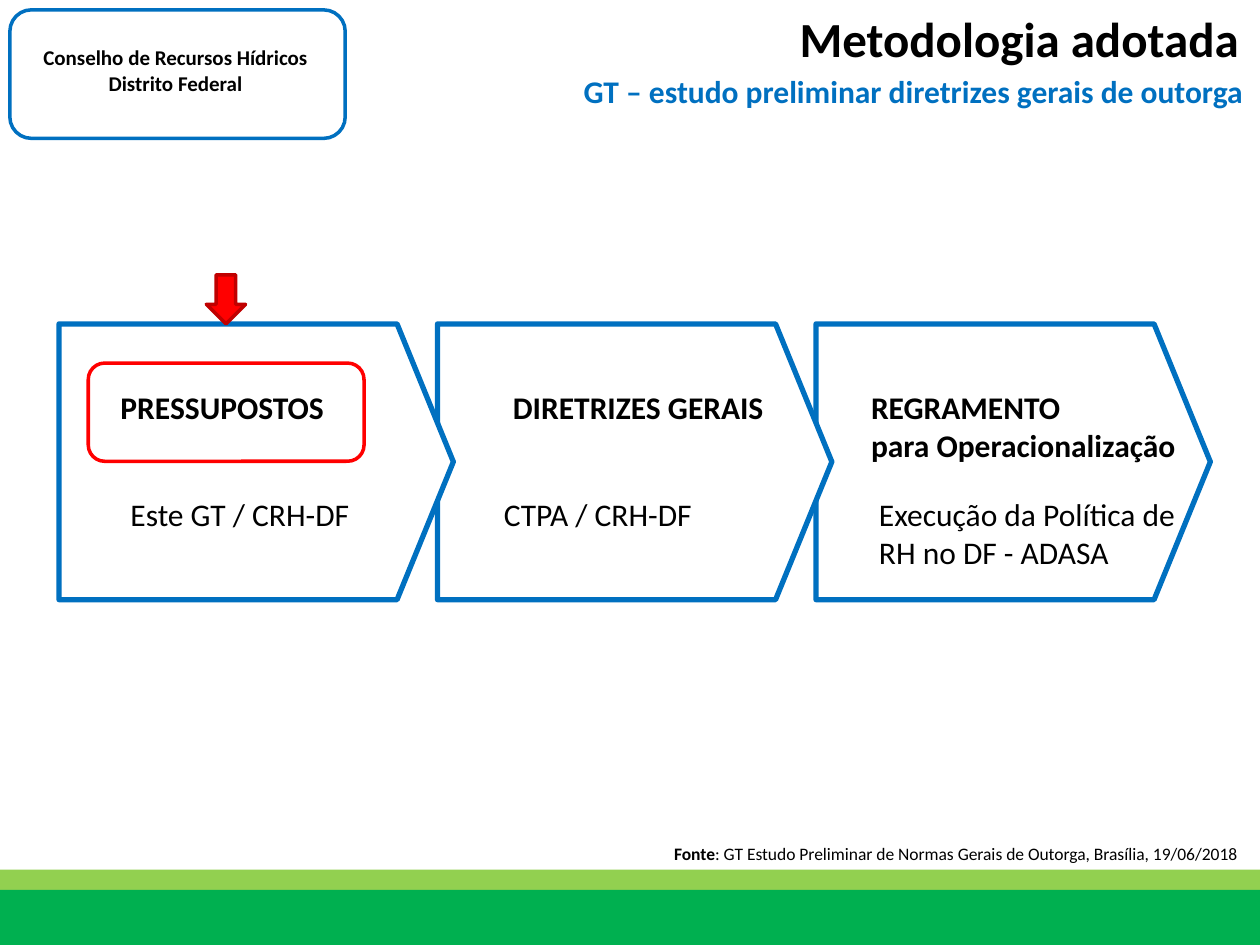
import pptx
import pptx.dml.color
import pptx.enum.shapes
import pptx.enum.text
import pptx.util

Cm = pptx.util.Cm
SHAPE = pptx.enum.shapes.MSO_SHAPE
ALIGN = pptx.enum.text.PP_ALIGN

BLACK = pptx.dml.color.RGBColor(0x00, 0x00, 0x00)
WHITE = pptx.dml.color.RGBColor(0xFF, 0xFF, 0xFF)
BLUE = pptx.dml.color.RGBColor(0x00, 0x70, 0xC0)
RED = pptx.dml.color.RGBColor(0xFF, 0x00, 0x00)
DARK_RED = pptx.dml.color.RGBColor(0xC0, 0x00, 0x00)
LIGHT_GREEN = pptx.dml.color.RGBColor(0x92, 0xD0, 0x50)
GREEN = pptx.dml.color.RGBColor(0x00, 0xB0, 0x50)

STAGE_WIDTH, STAGE_HEIGHT, STAGE_PITCH = 7.95, 5.56, 7.63
# heading lines, (indent, width), body, (indent, width), body wraps
STAGES = [
    (["PRESSUPOSTOS"], (0.99, 4.65), "Este GT / CRH-DF", (1.19, 4.98), False),
    (["DIRETRIZES GERAIS"], (1.27, 5.77), "CTPA / CRH-DF", (1.09, 4.34), False),
    (["REGRAMENTO", "para Operacionalização"], (0.86, 6.71),
     "Execução da Política de RH no DF - ADASA", (1.02, 6.76), True),
]


def write_text(shape, lines, size=18, color=BLACK, bold=False,
               align=ALIGN.LEFT, wrap=False):
    """Fill a shape; each line is a string or a list of (text, bold) runs."""
    frame = shape.text_frame
    frame.word_wrap = wrap
    frame.auto_size = pptx.enum.text.MSO_AUTO_SIZE.SHAPE_TO_FIT_TEXT
    frame.vertical_anchor = pptx.enum.text.MSO_ANCHOR.TOP
    for index, line in enumerate(lines):
        paragraph = frame.add_paragraph() if index else frame.paragraphs[0]
        paragraph.alignment = align
        runs = [(line, bold)] if isinstance(line, str) else line
        for text, run_bold in runs:
            run = paragraph.add_run()
            run.text = text
            run.font.name = "Calibri"
            run.font.size = pptx.util.Pt(size)
            run.font.bold = run_bold
            run.font.color.rgb = color


def add_text(slide, left, top, width, height, lines, **text_format):
    box = slide.shapes.add_textbox(Cm(left), Cm(top), Cm(width), Cm(height))
    write_text(box, lines, **text_format)


def add_figure(slide, kind, left, top, width, height, fill=None, line=None, weight=2):
    shape = slide.shapes.add_shape(kind, Cm(left), Cm(top), Cm(width), Cm(height))
    shape.shadow.inherit = False
    if fill is None:
        shape.fill.background()
    else:
        shape.fill.solid()
        shape.fill.fore_color.rgb = fill
    if line is None:
        shape.line.fill.background()
    else:
        shape.line.color.rgb = line
        shape.line.width = pptx.util.Pt(weight)
    return shape


def add_footer(slide, left, top, width, height):
    add_figure(slide, SHAPE.RECTANGLE, left, top, width, 0.61, LIGHT_GREEN)
    add_figure(slide, SHAPE.RECTANGLE, left, top + 0.41, width, height - 0.41, GREEN)
    source = [("Fonte", True),
              (": GT Estudo Preliminar de Normas Gerais de Outorga, Brasília, 19/06/2018", False)]
    add_text(slide, left + 13.34, top - 0.66, 12.06, 0.69, [source], size=10)


def add_heading(slide, left, top, width):
    """Place the title and the subtitle against the right of the box."""
    title = slide.shapes.title
    title.left, title.top = Cm(left + width - 9.57), Cm(top)
    title.width, title.height = Cm(9.47), Cm(1.45)
    write_text(title, ["Metodologia adotada"], size=28, bold=True, align=ALIGN.RIGHT)
    add_text(slide, left, top + 1.27, width, 1.02,
             ["GT – estudo preliminar diretrizes gerais de outorga"],
             color=BLUE, bold=True, align=ALIGN.RIGHT)


def add_stage(slide, left, top, stage):
    heading, (heading_indent, heading_width), body, (body_indent, body_width), wrap = stage
    arrow = add_figure(slide, SHAPE.PENTAGON, left, top, STAGE_WIDTH, STAGE_HEIGHT,
                       WHITE, BLUE, 3)
    arrow.adjustments[0] = 0.204
    add_text(slide, left + heading_indent, top + 1.17, heading_width,
             0.2 + 0.8 * len(heading), heading, bold=True)
    add_text(slide, left + body_indent, top + 3.33, body_width,
             1.8 if wrap else 1.02, [body], wrap=wrap)


def add_stages(slide, left, top):
    """Place the stages from right to left, so that each tip covers the next one."""
    for index, stage in reversed(list(enumerate(STAGES))):
        add_stage(slide, left + index * STAGE_PITCH, top, stage)


def add_highlight(slide, left, top):
    """Mark the current stage, whose corner is given."""
    add_figure(slide, SHAPE.DOWN_ARROW, left + 2.97, top - 0.99, 0.79, 0.99, RED, DARK_RED)
    add_figure(slide, SHAPE.ROUNDED_RECTANGLE, left + 0.59, top + 0.79, 5.56, 1.98, line=RED)


def add_council(slide, left, top, width, height):
    add_figure(slide, SHAPE.ROUNDED_RECTANGLE, left, top, width, height, WHITE, BLUE)
    add_text(slide, left + 0.38, top + 0.58, 5.92, 1.27,
             ["Conselho de Recursos Hídricos", "Distrito Federal"],
             size=12, bold=True, align=ALIGN.CENTER)


def main():
    presentation = pptx.Presentation()
    presentation.slide_width, presentation.slide_height = Cm(25.4), Cm(19.05)
    slide = presentation.slides.add_slide(presentation.slide_layouts[5])
    add_footer(slide, 0, 17.53, 25.4, 1.52)
    add_heading(slide, 11.4, 0.05, 13.92)
    add_stages(slide, 1.19, 6.53)
    add_highlight(slide, 1.19, 6.53)
    add_council(slide, 0.2, 0.2, 6.76, 2.59)
    presentation.save("out.pptx")


if __name__ == "__main__":
    main()
